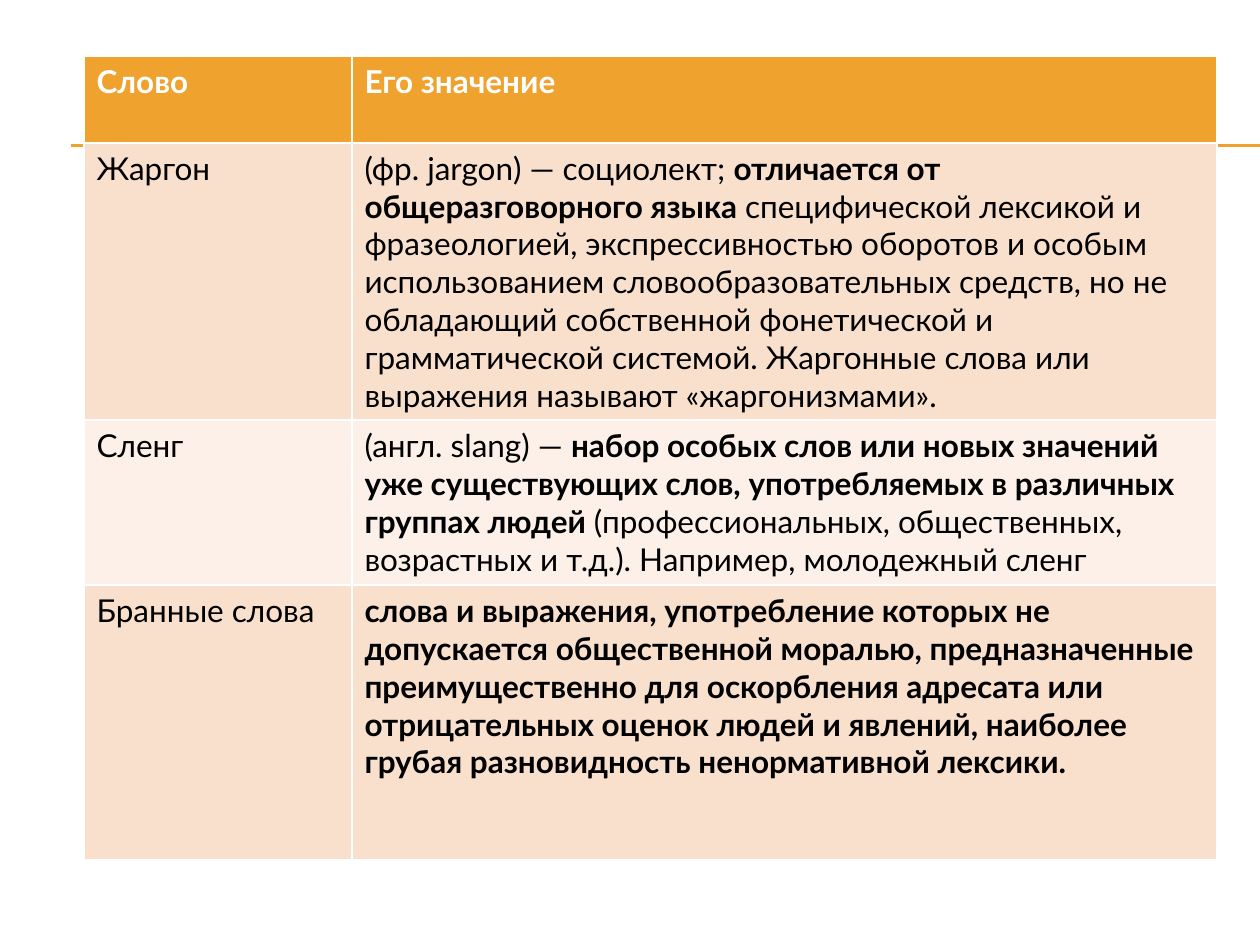
"""Build a slide with a table defining jargon, slang and swear words."""
from pptx import Presentation
from pptx.dml.color import RGBColor
from pptx.enum.shapes import MSO_CONNECTOR
from pptx.oxml.ns import qn
from pptx.util import Pt
from lxml.etree import SubElement

PX = 914400 // 126
ORANGE = RGBColor(0xF0, 0xA2, 0x2E)
PEACH = RGBColor(0xF9, 0xE0, 0xCD)
CREAM = RGBColor(0xFC, 0xF0, 0xE8)
WHITE = RGBColor(0xFF, 0xFF, 0xFF)
BLACK = RGBColor(0x00, 0x00, 0x00)
FONT = "Lato"

COLUMN_WIDTHS = [268, 865]
ROWS = [
    (87, ORANGE, WHITE, [
        [("Слово", True)],
        [("Его значение", True)],
    ]),
    (276, PEACH, BLACK, [
        [("Жаргон", False)],
        [("(фр. jargon) — социолект; ", False),
         ("отличается от общеразговорного языка ", True),
         ("специфической лексикой и фразеологией, экспрессивностью оборотов "
          "и особым использованием словообразовательных средств, но не "
          "обладающий собственной фонетической и грамматической системой. "
          "Жаргонные слова или выражения называют «жаргонизмами».", False)],
    ]),
    (165, CREAM, BLACK, [
        [("Сленг", False)],
        [("(англ. slang) — ", False),
         ("набор особых слов или новых значений уже существующих слов, "
          "употребляемых в различных группах людей ", True),
         ("(профессиональных, общественных, возрастных и т.д.). "
          "Например, молодежный сленг", False)],
    ]),
    (275, PEACH, BLACK, [
        [("Бранные слова", False)],
        [("слова и выражения, употребление которых не допускается "
          "общественной моралью, предназначенные преимущественно для "
          "оскорбления адресата или отрицательных оценок людей и явлений, "
          "наиболее грубая разновидность ненормативной лексики.", True)],
    ]),
]

presentation = Presentation()
presentation.slide_width = 1260 * PX
presentation.slide_height = 945 * PX
slide = presentation.slides.add_slide(presentation.slide_layouts[6])

for y in (145, 146):
    rule = slide.shapes.add_connector(
        MSO_CONNECTOR.STRAIGHT, 71 * PX, y * PX, 1260 * PX, y * PX)
    rule.line.color.rgb = ORANGE
    rule.line.width = Pt(0.75)
    SubElement(rule._element.spPr, qn("a:effectLst"))

table = slide.shapes.add_table(
    len(ROWS), len(COLUMN_WIDTHS), 84 * PX, 56 * PX,
    sum(COLUMN_WIDTHS) * PX, sum(row[0] for row in ROWS) * PX).table
for column, width in zip(table.columns, COLUMN_WIDTHS):
    column.width = width * PX

for table_row, (height, fill, color, contents) in zip(table.rows, ROWS):
    table_row.height = height * PX
    for cell, pieces in zip(table_row.cells, contents):
        cell.fill.solid()
        cell.fill.fore_color.rgb = fill
        paragraph = cell.text_frame.paragraphs[0]
        for text, bold in pieces:
            run = paragraph.add_run()
            run.text = text
            run.font.name = FONT
            run.font.size = Pt(18)
            run.font.bold = bold
            run.font.color.rgb = color

presentation.save("out.pptx")
